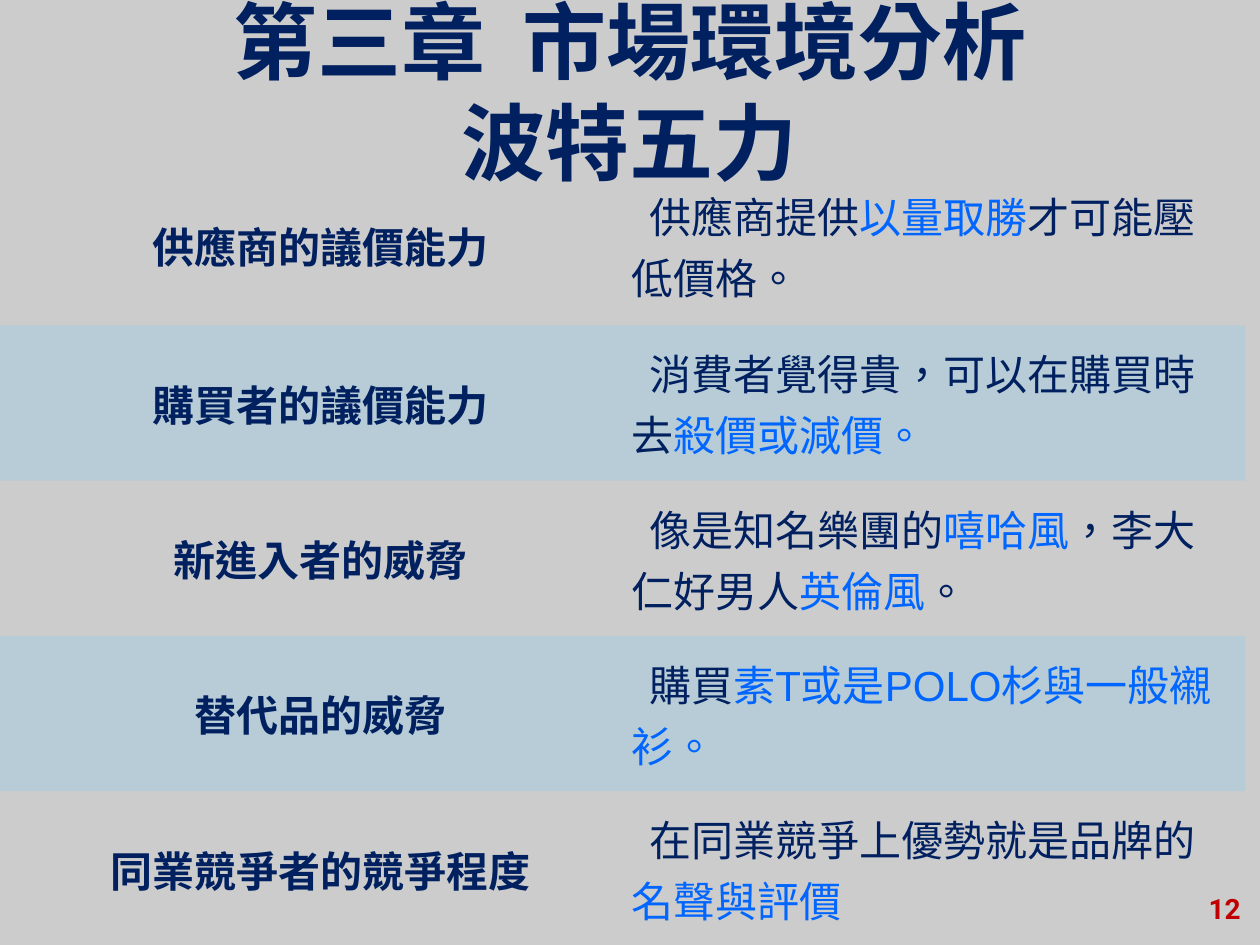
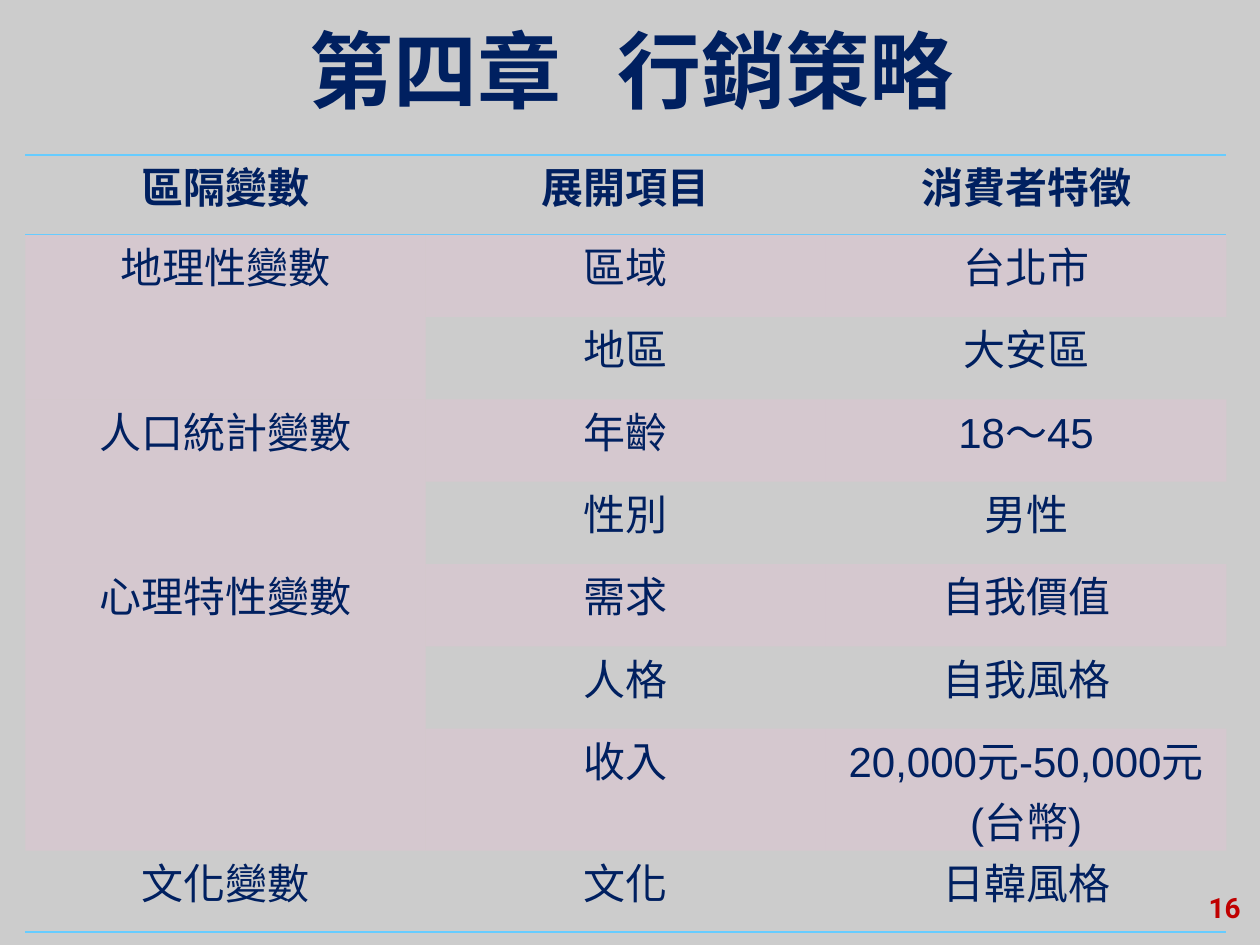
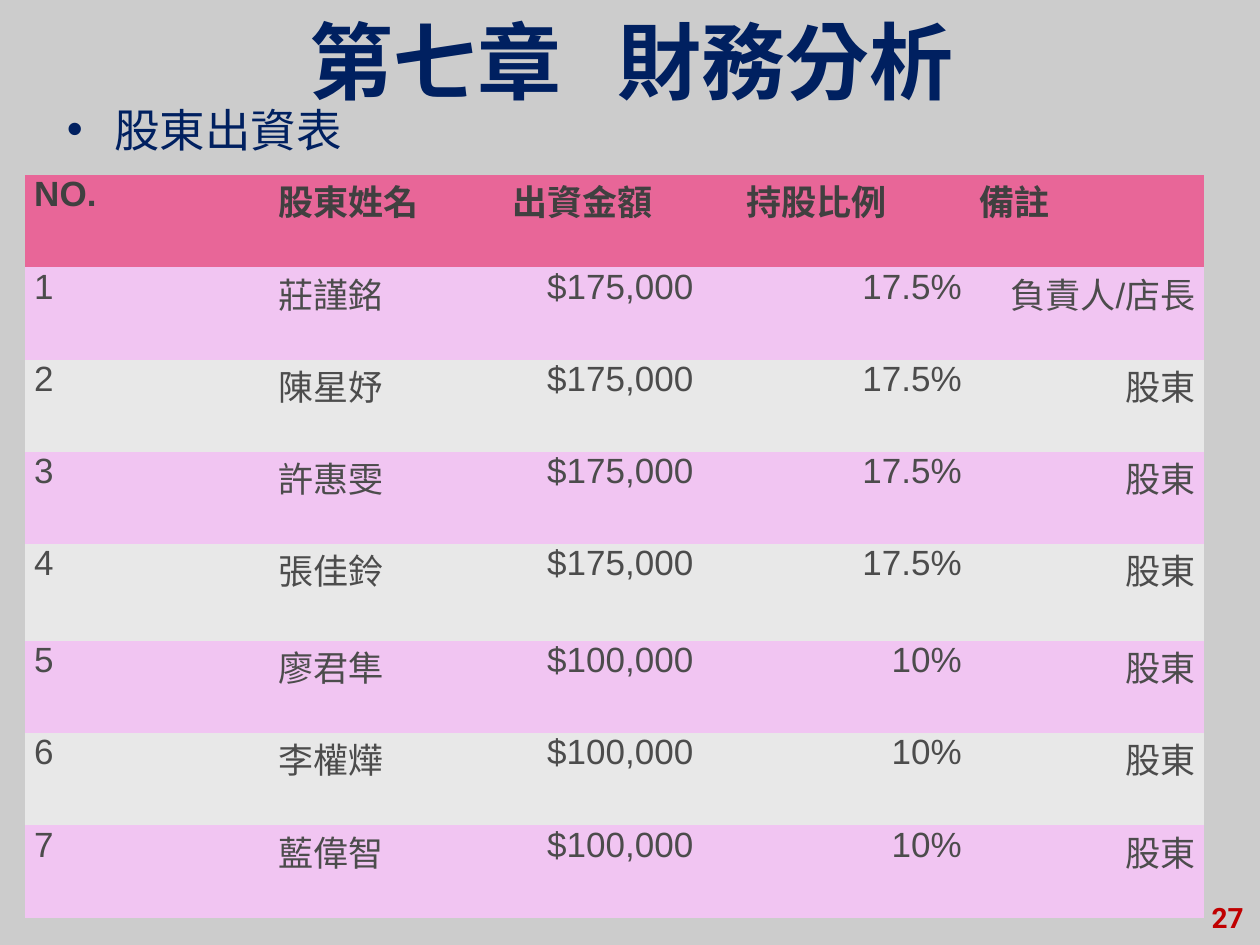
from dataclasses import dataclass

from pptx import Presentation
from pptx.dml.color import RGBColor
from pptx.enum import text
from pptx.oxml.ns import qn
from pptx.util import Cm, Pt
from lxml import etree

CENTER, RIGHT, JUSTIFY, LEFT = (
    text.PP_ALIGN.CENTER, text.PP_ALIGN.RIGHT, text.PP_ALIGN.JUSTIFY, text.PP_ALIGN.LEFT)
TOP, MIDDLE = text.MSO_ANCHOR.TOP, text.MSO_ANCHOR.MIDDLE
PLAIN_TABLE = "{2D5ABB26-0587-4C30-8999-92F81FD0307C}"


@dataclass(frozen=True)
class Theme:
    background: str = "CCCCCC"
    ink: str = "002060"
    accent: str = "0066FF"
    number: str = "C00000"
    sky: str = "66CCFF"
    rose: str = "FCBCDC"
    head_fill: str = "E86698"
    head_ink: str = "404040"
    row_ink: str = "4C4C4C"
    odd_fill: str = "F1C5F2"
    even_fill: str = "E8E8E8"
    latin: str = "Arial"
    cjk: str = "Noto Sans CJK SC"
    number_font: str = "Roboto"
    title_size: int = 48
    body_size: int = 26
    cell_size: int = 24
    small_size: int = 20
    number_size: int = 16


T = Theme()

FORCES = [
    ("供應商的議價能力", "供應商提供*以量取勝*才可能壓低價格。"),
    ("購買者的議價能力", "消費者覺得貴，可以在購買時去*殺價或減價。"),
    ("新進入者的威脅", "像是知名樂團的*嘻哈風*，李大仁好男人*英倫風*。"),
    ("替代品的威脅", "購買*素T或是POLO杉與一般襯衫。"),
    ("同業競爭者的競爭程度", "在同業競爭上優勢就是品牌的*名聲與評價"),
]
SEGMENT_HEAD = ("區隔變數", "展開項目", "消費者特徵")
SEGMENTS = [
    ("地理性變數", [("區域", "台北市"), ("地區", "大安區")]),
    ("人口統計變數", [("年齡", "18～45"), ("性別", "男性")]),
    ("心理特性變數", [("需求", "自我價值"), ("人格", "自我風格"),
                ("收入", "20,000元-50,000元(台幣)")]),
    ("文化變數", [("文化", "日韓風格")]),
]
HOLDER_HEAD = ("NO.", "股東姓名", "出資金額", "持股比例", "備註")
HOLDERS = [
    ("莊謹銘", "$175,000", "17.5%", "負責人/店長"),
    ("陳星妤", "$175,000", "17.5%", "股東"),
    ("許惠雯", "$175,000", "17.5%", "股東"),
    ("張佳鈴", "$175,000", "17.5%", "股東"),
    ("廖君隼", "$100,000", "10%", "股東"),
    ("李權燁", "$100,000", "10%", "股東"),
    ("藍偉智", "$100,000", "10%", "股東"),
]


# Text
def put(p, txt, size, color=T.ink, bold=False, font=T.latin, align=LEFT, spacing=0):
    """Add runs to a paragraph; parts between asterisks take the accent colour."""
    p.alignment = align
    for i, part in enumerate(txt.split("*")):
        if not part:
            continue
        r = p.add_run()
        r.text = part
        r.font.size, r.font.bold, r.font.name = Pt(size), bold, font
        r.font.color.rgb = RGBColor.from_string(T.accent if i % 2 else color)
        rpr = r.font._element
        rpr.set("lang", "zh-TW")
        if spacing:
            rpr.set("spc", str(round(spacing * 100)))
        etree.SubElement(rpr, qn("a:ea")).set("typeface", T.cjk)


def add_box(s, left, top, width, height, anchor=TOP):
    tf = s.shapes.add_textbox(Cm(left), Cm(top), Cm(width), Cm(height)).text_frame
    tf.word_wrap = True
    tf.vertical_anchor = anchor
    return tf


def add_title(s, chapter, name, gap, left, width, height, second_line=None):
    """Chapter and name stand apart by a space widened by gap points."""
    p = add_box(s, left, 0, width, height, MIDDLE).paragraphs[0]
    style = dict(size=T.title_size, bold=True, align=CENTER)
    put(p, chapter, **style)
    put(p, " ", spacing=gap, **style)
    put(p, name, **style)
    if second_line:
        p.add_line_break()
        put(p, second_line, **style)


def add_number(s, number, left, top):
    p = add_box(s, left, top, 25.4 - left, 19.05 - top).paragraphs[0]
    put(p, str(number), T.number_size, T.number, True, T.number_font, CENTER)


def add_bullet(s, txt, left, top, width, height):
    p = add_box(s, left, top, width, height).paragraphs[0]
    ppr = p._p.get_or_add_pPr()
    ppr.set("marL", str(Cm(0.95)))
    ppr.set("indent", str(-Cm(0.95)))
    etree.SubElement(ppr, qn("a:buFont")).set("typeface", T.latin)
    etree.SubElement(ppr, qn("a:buChar")).set("char", "•")
    put(p, txt, T.body_size, font=T.cjk)


# Tables
def add_grid(s, left, top, cols, rows):
    frame = s.shapes.add_table(len(rows), len(cols), Cm(left), Cm(top),
                               Cm(sum(cols)), Cm(sum(rows)))
    table = frame.table
    table.first_row = table.horz_banding = False
    table._tbl.tblPr.find(qn("a:tableStyleId")).text = PLAIN_TABLE
    for col, width in zip(table.columns, cols):
        col.width = Cm(width)
    for row, height in zip(table.rows, rows):
        row.height = Cm(height)
    return table


def paint(cell, color=None, alpha=None):
    if color is None:
        cell.fill.background()
        return
    cell.fill.solid()
    cell.fill.fore_color.rgb = RGBColor.from_string(color)
    if alpha:
        clr = cell._tc.tcPr.find(qn("a:solidFill"))[0]
        etree.SubElement(clr, qn("a:alpha")).set("val", str(alpha * 1000))


def fill_cell(cell, txt, inset, anchor=TOP, indent=0, **style):
    cell.margin_left = cell.margin_right = Cm(inset)
    cell.margin_top = cell.margin_bottom = 0
    cell.vertical_anchor = anchor
    p = cell.text_frame.paragraphs[0]
    if indent:
        p._p.get_or_add_pPr().set("indent", str(Cm(indent)))
    put(p, txt, **style)


def rule(cell, *sides):
    """Draw 1 pt lines on the given sides, listed as T then B."""
    tcpr = cell._tc.get_or_add_tcPr()
    for i, side in enumerate(sides):
        ln = etree.Element(qn("a:ln" + side), w=str(Pt(1)))
        fill = etree.SubElement(ln, qn("a:solidFill"))
        etree.SubElement(fill, qn("a:srgbClr")).set("val", T.sky)
        tcpr.insert(i, ln)


def add_forces(s):
    table = add_grid(s, 0, 3.33, [12.55] * 2, [3.23] + [3.13] * 4)
    for i, row in enumerate(FORCES):
        for j, txt in enumerate(row):
            cell = table.cell(i, j)
            paint(cell, T.sky if i % 2 else None, 20)
            fill_cell(cell, txt, 0.18, MIDDLE, 0.36, size=T.cell_size,
                      bold=j == 0, align=LEFT if j else CENTER)


def add_segments(s):
    # The income row is taller: its text takes two lines
    table = add_grid(s, 0.51, 3.12, [8.07] * 3, [1.61] + [1.66] * 6 + [2.46, 1.64])
    style = dict(inset=0.33, size=T.cell_size, align=CENTER)
    for j, txt in enumerate(SEGMENT_HEAD):
        paint(table.cell(0, j))
        fill_cell(table.cell(0, j), txt, bold=True, **style)
        rule(table.cell(0, j), "T", "B")
    i = 1
    for group, items in SEGMENTS:
        fill_cell(table.cell(i, 0), group, **style)
        for k, item in enumerate(items):
            paint(table.cell(i + k, 0), T.rose if len(items) > 1 else None, 20)
            for j, txt in enumerate(item, 1):
                cell = table.cell(i + k, j)
                paint(cell, T.rose if (i + k) % 2 and len(items) > 1 else None, 20)
                fill_cell(cell, txt, **style)
        if len(items) > 1:
            table.cell(i, 0).merge(table.cell(i + len(items) - 1, 0))
        i += len(items)
    for j in range(3):
        rule(table.cell(i - 1, j), "B")


def add_holders(s):
    table = add_grid(s, 0.51, 3.53, [4.93] + [4.71] * 4,
                     [1.86] * 4 + [1.95] + [1.86] * 3)
    aligns = (JUSTIFY, JUSTIFY, CENTER, RIGHT, RIGHT)
    rows = [HOLDER_HEAD] + [(str(n), *row) for n, row in enumerate(HOLDERS, 1)]
    for i, row in enumerate(rows):
        head = i == 0
        fill = T.head_fill if head else T.odd_fill if i % 2 else T.even_fill
        for j, txt in enumerate(row):
            paint(table.cell(i, j), fill)
            fill_cell(table.cell(i, j), txt, 0.18, size=T.small_size, bold=head,
                      color=T.head_ink if head else T.row_ink,
                      align=JUSTIFY if head else aligns[j])


def add_slide(prs):
    s = prs.slides.add_slide(prs.slide_layouts[6])
    s.background.fill.solid()
    s.background.fill.fore_color.rgb = RGBColor.from_string(T.background)
    return s


def main():
    prs = Presentation()
    prs.slide_width, prs.slide_height = Cm(25.4), Cm(19.05)

    # Five forces
    s = add_slide(prs)
    add_title(s, "第三章", "市場環境分析", 10, 0, 25.4, 3.66, "波特五力")
    add_forces(s)
    add_number(s, 12, 23.98, 17.84)

    # Market segments
    s = add_slide(prs)
    add_title(s, "第四章", "行銷策略", 21, 1.3, 22.86, 2.77)
    add_segments(s)
    add_number(s, 16, 23.98, 17.83)

    # Shareholders
    s = add_slide(prs)
    add_title(s, "第七章", "財務分析", 21, 1.3, 22.86, 2.41)
    add_bullet(s, "股東出資表", 1.1, 1.93, 22.86, 1.75)
    add_number(s, 27, 24.1, 18.03)
    add_holders(s)

    prs.save("out.pptx")


if __name__ == "__main__":
    main()
